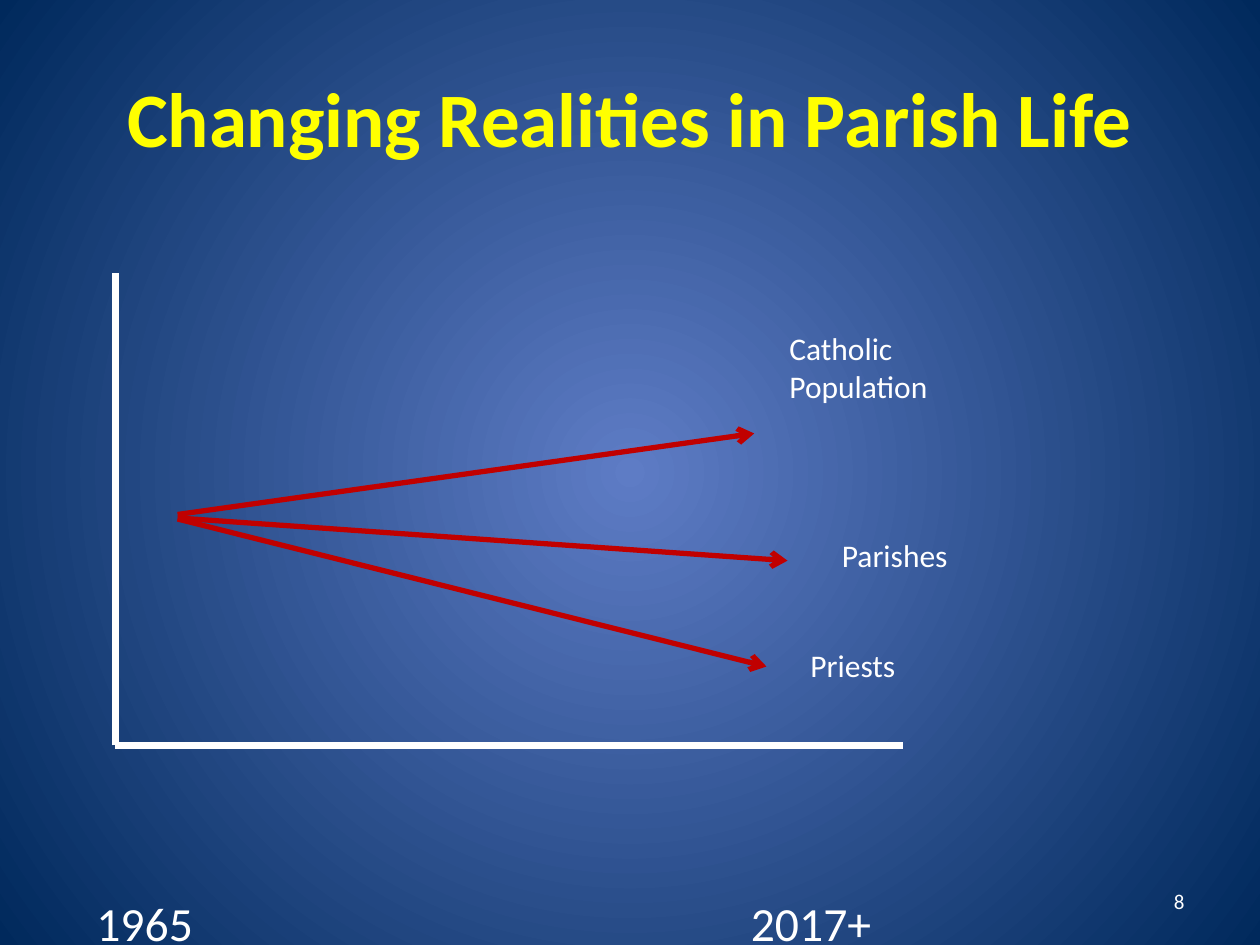
from lxml.etree import SubElement
from pptx import Presentation
from pptx.dml.color import RGBColor
from pptx.enum.shapes import MSO_CONNECTOR
from pptx.enum.text import MSO_ANCHOR, PP_ALIGN
from pptx.oxml.ns import qn
from pptx.util import Pt

THEME = {
    "font": "Calibri",
    "title": "FFFF00", "text": "FFFFFF", "axis": "FFFFFF", "trend": "C00000",
    "background": ("5E7CC5", "00295C"),
    "title_size": 44, "year_size": 27.2, "label_size": 18, "number_size": 12,
    "axis_width": 4.5, "trend_width": 3,
}

TITLE = "Changing Realities in Parish Life"
TITLE_BOX = (36, 21.6, 648, 90)
PAGE_NUMBER = "8"
PAGE_NUMBER_BOX = (516, 500.4, 168, 28.8)

ORIGIN = (66, 426)
AXIS_ENDS = [(66, 156), (516, 426)]

# Arrow start, arrow end, label lines, label box
TRENDS = [
    ((101.5, 296), (450, 320.4), ["Parishes"], (474, 303, 102, 29)),
    ((101.5, 294), (431, 247.7), ["Catholic", "Population"], (444, 184.3, 162, 51)),
    ((101.5, 296.6), (438, 380.9), ["Priests"], (456, 365.8, 132, 29)),
]

YEARS = [("1965", 48), ("2017+", 422)]
YEAR_TOP, YEAR_WIDTH, YEAR_HEIGHT = 507, 100, 40


def color(name):
    return RGBColor.from_string(THEME[name])


def write_text(shape, lines, *, size, fill="text", bold=False,
               align=PP_ALIGN.LEFT, anchor=MSO_ANCHOR.TOP):
    frame = shape.text_frame
    frame.word_wrap = True
    frame.vertical_anchor = anchor
    frame.text = "\n".join(lines)
    for paragraph in frame.paragraphs:
        paragraph.alignment = align
        font = paragraph.runs[0].font
        font.name, font.size, font.bold = THEME["font"], Pt(THEME[size]), bold
        font.color.rgb = color(fill)


def add_text(slide, lines, box, **text_format):
    shape = slide.shapes.add_textbox(*map(Pt, box))
    write_text(shape, lines, **text_format)


def add_line(slide, start, end, *, style, arrow=False):
    connector = slide.shapes.add_connector(
        MSO_CONNECTOR.STRAIGHT, *map(Pt, start + end))
    connector.line.color.rgb = color(style)
    connector.line.width = Pt(THEME[style + "_width"])
    properties = connector._element.spPr
    if arrow:
        SubElement(properties.find(qn("a:ln")), qn("a:tailEnd"), type="arrow")
    SubElement(properties, qn("a:effectLst"))


def set_radial_background(slide):
    fill = slide.background.fill
    fill.gradient()
    for stop, position, value in zip(fill.gradient_stops, (0, 1), THEME["background"]):
        stop.position = position
        stop.color.rgb = RGBColor.from_string(value)
    linear = next(slide._element.iter(qn("a:lin")))
    gradient = linear.getparent()
    gradient.remove(linear)
    path = SubElement(gradient, qn("a:path"), path="circle")
    gradient.find(qn("a:gsLst")).addnext(path)
    SubElement(path, qn("a:fillToRect"), l="50000", t="50000", r="50000", b="50000")


def place_title(slide):
    title = slide.shapes.title
    title.left, title.top, title.width, title.height = map(Pt, TITLE_BOX)
    write_text(title, [TITLE], size="title_size", fill="title", bold=True,
               align=PP_ALIGN.CENTER, anchor=MSO_ANCHOR.MIDDLE)


def main():
    presentation = Presentation()
    presentation.slide_width, presentation.slide_height = Pt(720), Pt(540)
    slide = presentation.slides.add_slide(presentation.slide_layouts[5])
    set_radial_background(slide)
    place_title(slide)

    for year, left in YEARS:
        add_text(slide, [year], (left, YEAR_TOP, YEAR_WIDTH, YEAR_HEIGHT),
                 size="year_size")
    add_text(slide, [PAGE_NUMBER], PAGE_NUMBER_BOX, size="number_size",
             align=PP_ALIGN.RIGHT, anchor=MSO_ANCHOR.MIDDLE)

    for end in AXIS_ENDS:
        add_line(slide, ORIGIN, end, style="axis")
    for start, end, label, box in TRENDS:
        add_line(slide, start, end, style="trend", arrow=True)
        add_text(slide, label, box, size="label_size")

    presentation.save("out.pptx")


if __name__ == "__main__":
    main()
